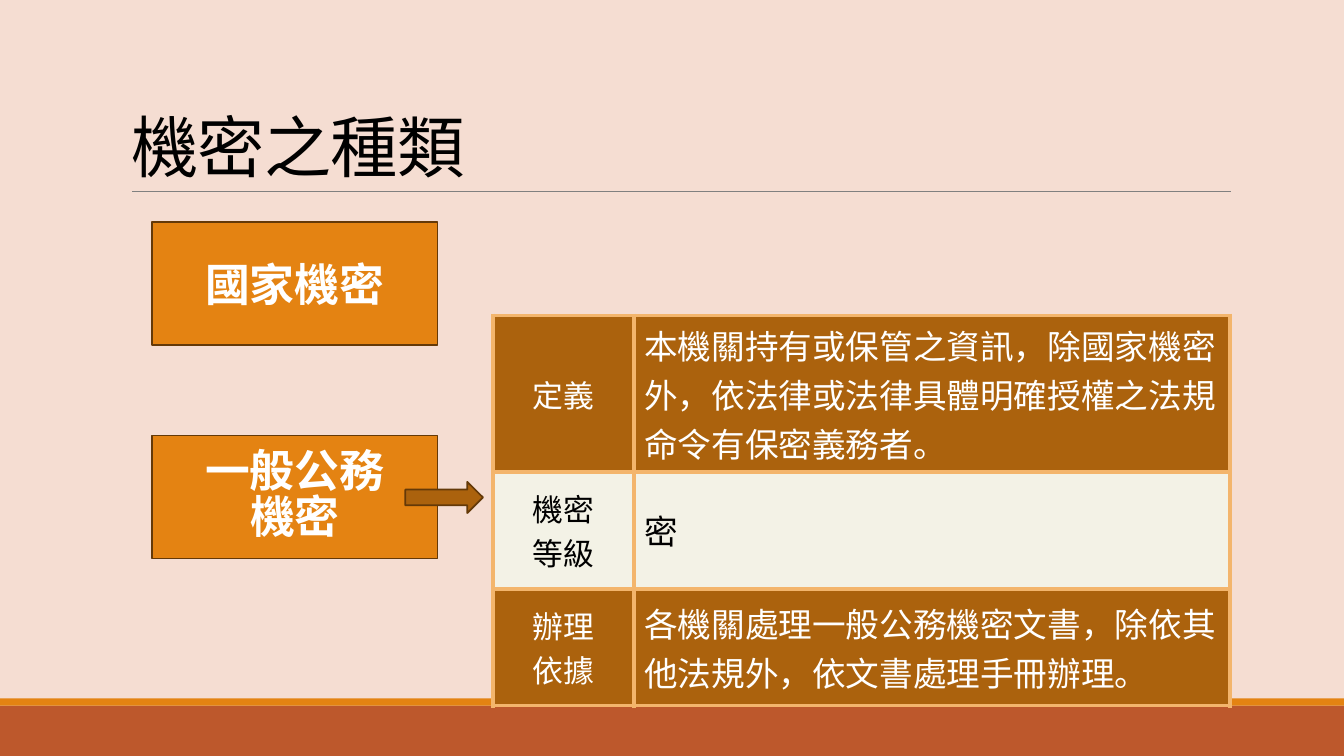
from lxml import etree
from pptx import Presentation
from pptx import util as u
from pptx.dml.color import RGBColor
from pptx.enum import shapes, text
from pptx.oxml import ns

FONT = "Noto Sans CJK SC"
COLORS = {
    "background": "F5DDD2", "band": "BD582C", "orange": "E48312",
    "rule": "808080", "outline": "643908", "brown": "AB620D",
    "cream": "F3F2E6", "border": "F3B56C", "white": "FFFFFF", "black": "000000",
}
KINDS = ["國家機密", "一般公務\n機密"]
DETAILS = [
    ("定義", "本機關持有或保管之資訊，除國家機密外，依法律或法律具體明確授權之法規命令有保密義務者。"),
    ("機密\n等級", "密"),
    ("辦理\n依據", "各機關處理一般公務機密文書，除依其他法規外，依文書處理手冊辦理。"),
]


def color(name):
    return RGBColor.from_string(COLORS[name])


def inches(*lengths):
    return [u.Inches(length) for length in lengths]


def write(frame, content, size, color_name, align=text.PP_ALIGN.LEFT,
          bold=False, spacing=None):
    """Write one paragraph for each line of content."""
    for index, line in enumerate(content.split("\n")):
        paragraph = frame.add_paragraph() if index else frame.paragraphs[0]
        paragraph.alignment = align
        paragraph.line_spacing = spacing
        run = paragraph.add_run()
        run.text = line
        run.font.size = u.Pt(size)
        run.font.bold = bold
        run.font.name = FONT
        run.font.color.rgb = color(color_name)
        east_asian = etree.SubElement(run.font._element, ns.qn("a:ea"))
        east_asian.set("typeface", FONT)


def add_block(slide, box, fill, kind=shapes.MSO_SHAPE.RECTANGLE, outline=None):
    shape = slide.shapes.add_shape(kind, *inches(*box))
    shape.shadow.inherit = False
    shape.fill.solid()
    shape.fill.fore_color.rgb = color(fill)
    if outline:
        shape.line.color.rgb = color(outline)
        shape.line.width = u.Pt(1.25)
    else:
        shape.line.fill.background()
    return shape


def add_backdrop(slide, width, height):
    slide.background.fill.solid()
    slide.background.fill.fore_color.rgb = color("background")
    add_block(slide, (0, height - 0.5, width, 0.5), "band")
    add_block(slide, (0, height - 0.57, width, 0.07), "orange")


def add_title(slide, box, content):
    """Place the title with a thin rule along its lower edge."""
    left, top, width, height = box
    bottom = top + height
    rule = slide.shapes.add_connector(
        shapes.MSO_CONNECTOR.STRAIGHT,
        *inches(left + 0.11, bottom, left + width + 0.01, bottom))
    rule.line.color.rgb = color("rule")
    rule.line.width = u.Pt(0.5)
    etree.SubElement(rule._element.spPr, ns.qn("a:effectLst"))

    title = slide.shapes.title
    title.left, title.top, title.width, title.height = inches(*box)
    frame = title.text_frame
    frame.word_wrap = True
    frame.auto_size = text.MSO_AUTO_SIZE.NONE
    frame.vertical_anchor = text.MSO_ANCHOR.BOTTOM
    write(frame, content, 48, "black", spacing=0.85)
    frame.paragraphs[0].runs[0].font._element.set("spc", "-50")


def add_kinds(slide, box, pitch):
    left, top, width, height = box
    for index, kind in enumerate(KINDS):
        shape = add_block(slide, (left, top + index * pitch, width, height),
                          "orange", outline="outline")
        frame = shape.text_frame
        frame.word_wrap = True
        frame.vertical_anchor = text.MSO_ANCHOR.MIDDLE
        spacing = 0.84 if "\n" in kind else None
        write(frame, kind, 32, "white", text.PP_ALIGN.CENTER, True, spacing)


def format_cell(cell, fill):
    cell.vertical_anchor = text.MSO_ANCHOR.MIDDLE
    properties = cell._tc.get_or_add_tcPr()
    for side in ("lnL", "lnR", "lnT", "lnB"):
        line = etree.SubElement(properties, ns.qn(f"a:{side}"), w=str(u.Pt(3)))
        solid = etree.SubElement(line, ns.qn("a:solidFill"))
        etree.SubElement(solid, ns.qn("a:srgbClr"), val=COLORS["border"])
    cell.fill.solid()
    cell.fill.fore_color.rgb = color(fill)


def add_details(slide, box):
    left, top, width, height = box
    frame = slide.shapes.add_table(len(DETAILS), 2, *inches(*box))
    table = frame.table
    label_width = 1.4
    for column, column_width in zip(table.columns, (label_width, width - label_width)):
        column.width = u.Inches(column_width)
    for index, (row, contents) in enumerate(zip(table.rows, DETAILS)):
        row.height = u.Inches(1.16 if index else height - 2 * 1.16)
        fill, ink = ("cream", "black") if index % 2 else ("brown", "white")
        label, detail = row.cells
        write(label.text_frame, contents[0], 22, ink, text.PP_ALIGN.CENTER)
        write(detail.text_frame, contents[1], 24, ink)
        for cell in (label, detail):
            format_cell(cell, fill)


def build_slide(presentation):
    slide = presentation.slides.add_slide(presentation.slide_layouts[5])
    add_backdrop(slide, 13.33, 7.5)
    add_title(slide, (1.2, 0.31, 11, 1.59), "機密之種類")
    add_kinds(slide, (1.51, 2.2, 2.83, 1.22), 2.12)
    add_details(slide, (4.89, 3.13, 7.31, 3.51))
    add_block(slide, (4.02, 4.78, 0.77, 0.31), "brown",
              shapes.MSO_SHAPE.RIGHT_ARROW, "outline")


def main():
    presentation = Presentation()
    presentation.slide_width, presentation.slide_height = inches(13.33, 7.5)
    build_slide(presentation)
    presentation.save("out.pptx")


if __name__ == "__main__":
    main()
